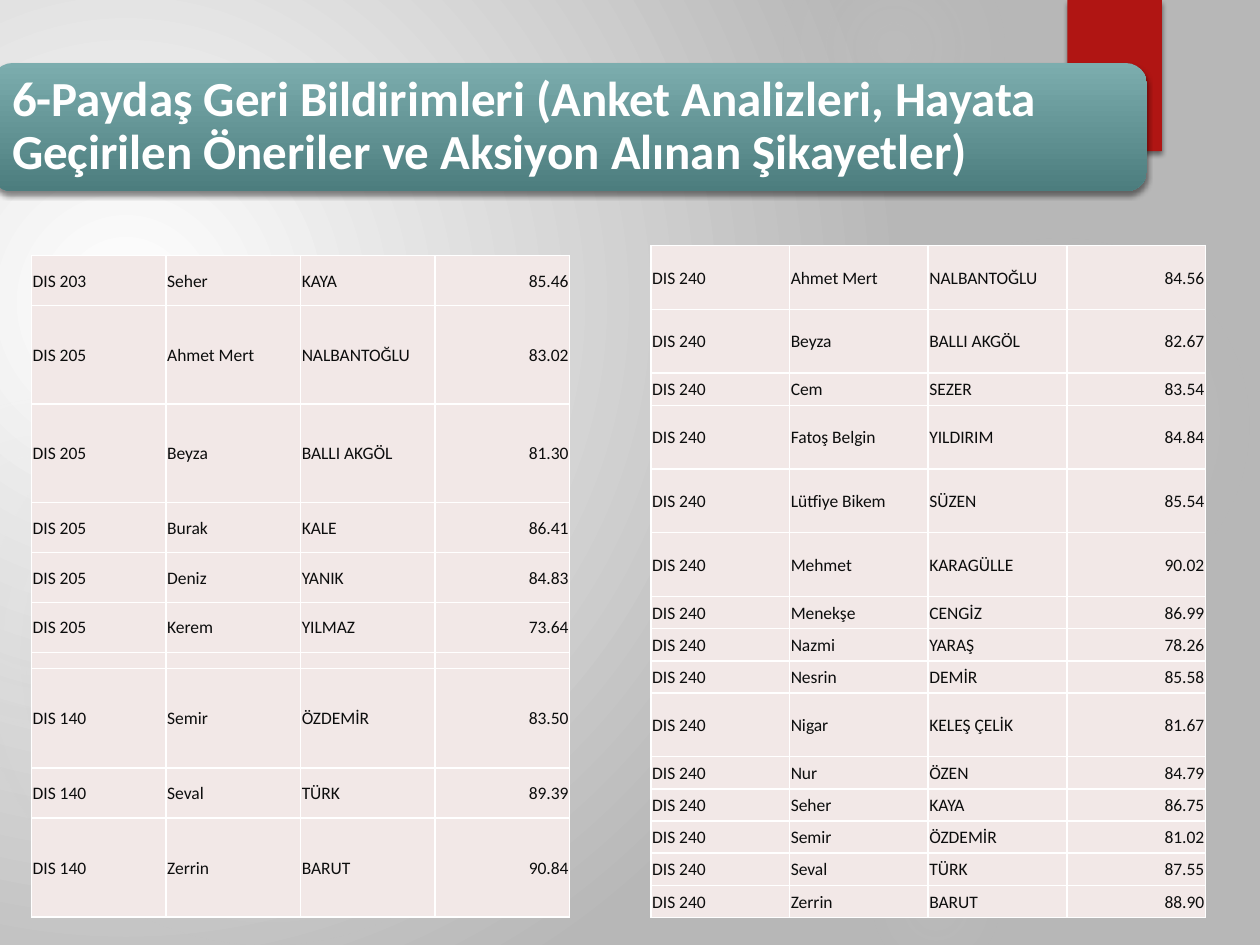
"""Build the stakeholder feedback slide with its three survey score tables."""
from pptx import Presentation
from pptx.dml.color import RGBColor
from pptx.enum.shapes import MSO_SHAPE
from pptx.enum.text import MSO_ANCHOR, PP_ALIGN
from pptx.oxml import parse_xml
from pptx.oxml.ns import nsdecls, qn
from pptx.util import Pt

WHITE = RGBColor(0xFF, 0xFF, 0xFF)
BACKDROP = RGBColor(0xB7, 0xB7, 0xB7)
GLOW = RGBColor(0xD9, 0xD9, 0xD9)
RED = RGBColor(0xB0, 0x15, 0x13)
TEAL_LIGHT = RGBColor(0x7C, 0xAD, 0xAE)
TEAL_DARK = RGBColor(0x4C, 0x7D, 0x7E)
CELL = RGBColor(0xF2, 0xE8, 0xE7)
INK = RGBColor(0x0C, 0x0D, 0x0D)
SHADOW = RGBColor(0x00, 0x00, 0x00)

TITLE = ("6-Paydaş Geri Bildirimleri (Anket Analizleri, Hayata Geçirilen Öneriler "
         "ve Aksiyon Alınan Şikayetler)")
CENTER_PATH = ('<a:path path="circle"><a:fillToRect l="50000" t="50000" '
               'r="50000" b="50000"/></a:path>')
CORNER_PATH = ('<a:path path="circle"><a:fillToRect l="45000" t="65000" '
               'r="125000" b="100000"/></a:path>')
DOWNWARD = '<a:lin ang="5400000" scaled="0"/>'

GLOWS = [
    (496, 132, 222, [(0, 7), (36, 6), (69, 0)]),
    (448, -36, 126, [(0, 14), (36, 7), (73, 0)]),
    (496, 480, 78, [(0, 9), (36, 5), (66, 0)]),
    (-12, 210, 330, [(0, 11), (36, 10), (75, 0)]),
    (-66, 228, 186, [(0, 8), (36, 8), (72, 0)]),
]
DIS_140 = [
    ("", "", "", ""),
    ("DIS 140", "Semir", "ÖZDEMİR", "83.50"),
    ("DIS 140", "Seval", "TÜRK", "89.39"),
    ("DIS 140", "Zerrin", "BARUT", "90.84"),
]
DIS_205 = [
    ("DIS 203", "Seher", "KAYA", "85.46"),
    ("DIS 205", "Ahmet Mert", "NALBANTOĞLU", "83.02"),
    ("DIS 205", "Beyza", "BALLI AKGÖL", "81.30"),
    ("DIS 205", "Burak", "KALE", "86.41"),
    ("DIS 205", "Deniz", "YANIK", "84.83"),
    ("DIS 205", "Kerem", "YILMAZ", "73.64"),
]
DIS_240 = [("DIS 240", *row) for row in [
    ("Ahmet Mert", "NALBANTOĞLU", "84.56"),
    ("Beyza", "BALLI AKGÖL", "82.67"),
    ("Cem", "SEZER", "83.54"),
    ("Fatoş Belgin", "YILDIRIM", "84.84"),
    ("Lütfiye Bikem", "SÜZEN", "85.54"),
    ("Mehmet", "KARAGÜLLE", "90.02"),
    ("Menekşe", "CENGİZ", "86.99"),
    ("Nazmi", "YARAŞ", "78.26"),
    ("Nesrin", "DEMİR", "85.58"),
    ("Nigar", "KELEŞ ÇELİK", "81.67"),
    ("Nur", "ÖZEN", "84.79"),
    ("Seher", "KAYA", "86.75"),
    ("Semir", "ÖZDEMİR", "81.02"),
    ("Seval", "TÜRK", "87.55"),
    ("Zerrin", "BARUT", "88.90"),
]]


def set_attributes(target, values):
    for name, value in values.items():
        setattr(target, name, value)


def set_gradient(fill, parent, stops, direction):
    fill.solid()
    stop_xml = "".join(
        f'<a:gs pos="{position * 1000}"><a:srgbClr val="{color}">'
        f'<a:alpha val="{alpha * 1000}"/></a:srgbClr></a:gs>'
        for position, color, alpha in stops)
    gradient = parse_xml(f'<a:gradFill {nsdecls("a")} rotWithShape="1">'
                         f'<a:gsLst>{stop_xml}</a:gsLst>{direction}</a:gradFill>')
    parent.replace(parent.find(qn("a:solidFill")), gradient)


def add_plain_shape(shapes, kind, left, top, width, height):
    shape = shapes.add_shape(kind, Pt(left), Pt(top), Pt(width), Pt(height))
    shape.shadow.inherit = False
    shape.line.fill.background()
    return shape


def add_shadow(shape):
    effects = shape._element.spPr.find(qn("a:effectLst"))
    effects.append(parse_xml(
        f'<a:outerShdw {nsdecls("a")} blurRad="{Pt(3)}" dist="{Pt(2)}" dir="5400000" '
        f'rotWithShape="0"><a:srgbClr val="{SHADOW}"><a:alpha val="45000"/>'
        '</a:srgbClr></a:outerShdw>'))


def add_backdrop(slide):
    fill = slide.background.fill
    fill.solid()
    properties = slide._element.find(".//" + qn("p:bgPr"))
    set_gradient(fill, properties, [(0, WHITE, 100), (100, BACKDROP, 100)], CORNER_PATH)
    for left, top, size, stops in GLOWS:
        glow = add_plain_shape(slide.shapes, MSO_SHAPE.OVAL, left, top, size, size)
        set_gradient(glow.fill, glow._element.spPr,
                     [(position, GLOW, alpha) for position, alpha in stops], CENTER_PATH)
    ribbon = add_plain_shape(slide.shapes, MSO_SHAPE.RECTANGLE, 610, 0, 54, 86.4)
    ribbon.fill.solid()
    ribbon.fill.fore_color.rgb = RED
    add_shadow(ribbon)


def format_cell(cell, text, alignment):
    properties = cell._tc.get_or_add_tcPr()
    for side in ("lnL", "lnR", "lnT", "lnB"):
        properties.append(parse_xml(
            f'<a:{side} {nsdecls("a")} w="{Pt(1)}"><a:solidFill>'
            f'<a:srgbClr val="{WHITE}"/></a:solidFill></a:{side}>'))
    cell.fill.solid()
    cell.fill.fore_color.rgb = CELL
    if text:
        set_attributes(cell, {
            "text": text, "vertical_anchor": MSO_ANCHOR.MIDDLE, "margin_left": Pt(0.7),
            "margin_right": Pt(0.7), "margin_top": Pt(0.7), "margin_bottom": 0})
        paragraph = cell.text_frame.paragraphs[0]
        paragraph.alignment = alignment
        font = paragraph.runs[0].font
        set_attributes(font, {"name": "Calibri", "size": Pt(10)})
        font.color.rgb = INK


def add_score_table(slide, left, top, column_width, rows, tall_rows, tall, short):
    heights = [tall if index in tall_rows else short for index in range(len(rows))]
    columns = len(rows[0])
    table = slide.shapes.add_table(len(rows), columns, Pt(left), Pt(top),
                                   Pt(column_width * columns), Pt(sum(heights))).table
    set_attributes(table, {"first_row": False, "horz_banding": False})
    for column in table.columns:
        column.width = Pt(column_width)
    for row, height, texts in zip(table.rows, heights, rows):
        row.height = Pt(height)
        for index, (cell, text) in enumerate(zip(row.cells, texts)):
            is_score = index == columns - 1
            format_cell(cell, text, PP_ALIGN.RIGHT if is_score else PP_ALIGN.LEFT)


def add_title(slide):
    group = slide.shapes.add_group_shape()
    banner = add_plain_shape(group.shapes, MSO_SHAPE.ROUNDED_RECTANGLE, -5, 36, 660.5, 73.4)
    set_gradient(banner.fill, banner._element.spPr,
                 [(0, TEAL_LIGHT, 100), (100, TEAL_DARK, 100)], DOWNWARD)
    add_shadow(banner)
    box = group.shapes.add_textbox(Pt(-1.5), Pt(39.6), Pt(653), Pt(66.2))
    frame = box.text_frame
    set_attributes(frame, {
        "word_wrap": True, "vertical_anchor": MSO_ANCHOR.MIDDLE, "margin_left": Pt(8.4),
        "margin_right": Pt(8.4), "margin_top": Pt(8.4), "margin_bottom": Pt(8.4)})
    paragraph = frame.paragraphs[0]
    paragraph.line_spacing = 0.9
    run = paragraph.add_run()
    run.text = TITLE
    set_attributes(run.font, {"name": "Calibri", "size": Pt(28), "bold": True})
    run.font.color.rgb = WHITE


def main():
    presentation = Presentation()
    set_attributes(presentation, {"slide_width": Pt(720), "slide_height": Pt(540)})
    slide = presentation.slides.add_slide(presentation.slide_layouts[6])
    add_backdrop(slide)
    add_score_table(slide, 18, 325.4, 76.9, DIS_140, {0, 1, 3}, 56.7, 28.6)
    add_score_table(slide, 18, 146, 76.9, DIS_205, {1, 2}, 56.4, 28.5)
    add_score_table(slide, 372, 140.4, 79.2, DIS_240, {0, 1, 3, 4, 5, 9}, 36.4, 18.4)
    add_title(slide)
    presentation.save("out.pptx")


if __name__ == "__main__":
    main()
